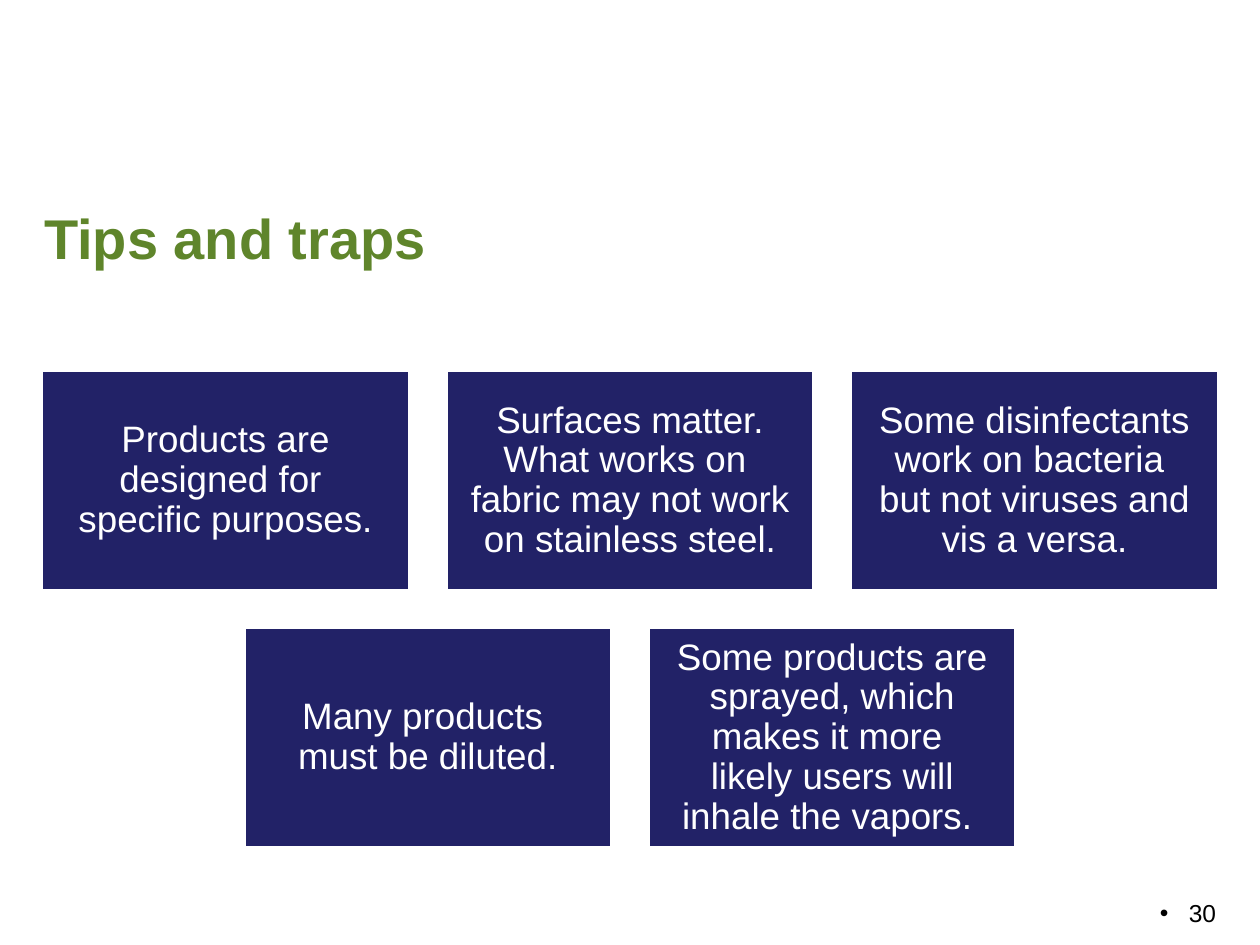
import dataclasses

import lxml.etree
import pptx
import pptx.dml.color
import pptx.enum.shapes
import pptx.enum.text
import pptx.oxml.ns
import pptx.util

Inches = pptx.util.Inches
Pt = pptx.util.Pt
Align = pptx.enum.text.PP_ALIGN
Anchor = pptx.enum.text.MSO_ANCHOR


@dataclasses.dataclass(frozen=True)
class Theme:
    font: str = "Arial"
    green: str = "5F852B"
    navy: str = "222267"
    white: str = "FFFFFF"
    black: str = "000000"
    title_size: int = 32
    card_size: int = 21
    number_size: int = 14


THEME = Theme()

TIPS = [
    "Products are designed for \nspecific purposes.",
    "Surfaces matter. What works on \nfabric may not work on stainless steel.",
    "Some disinfectants work on bacteria \nbut not viruses and vis a versa.",
    "Many products \nmust be diluted.",
    "Some products are sprayed, which makes it more \n"
    "likely users will inhale the vapors. ",
]


def rgb(color):
    return pptx.dml.color.RGBColor.from_string(color)


def set_attributes(target, values):
    for name, value in values.items():
        setattr(target, name, value)


def write_text(shape, text, size, color, frame_format, paragraph_format, bold=False):
    """Fill a shape with one formatted paragraph; newlines become line breaks."""
    frame = shape.text_frame
    set_attributes(frame, {"word_wrap": True, **frame_format})
    paragraph = frame.paragraphs[0]
    paragraph.text = text
    set_attributes(paragraph, paragraph_format)
    for run in paragraph.runs:
        set_attributes(run.font, {"name": THEME.font, "size": Pt(size), "bold": bold})
        run.font.color.rgb = rgb(color)
    return paragraph


def add_title(slide, left, top, width, height):
    title = slide.shapes.title
    set_attributes(title, {"left": left, "top": top, "width": width, "height": height})
    write_text(title, "Tips and traps", THEME.title_size, THEME.green,
               {"vertical_anchor": Anchor.MIDDLE},
               {"alignment": Align.LEFT, "line_spacing": Pt(33)}, bold=True)


def add_card(slide, text, left, top, width, height):
    card = slide.shapes.add_shape(
        pptx.enum.shapes.MSO_SHAPE.RECTANGLE, left, top, width, height)
    card.shadow.inherit = False
    card.fill.solid()
    card.fill.fore_color.rgb = rgb(THEME.navy)
    card.line.color.rgb = rgb(THEME.white)
    card.line.width = Pt(2)
    margins = {f"margin_{side}": Inches(0.09)
               for side in ("left", "top", "right", "bottom")}
    write_text(card, text, THEME.card_size, THEME.white,
               {"vertical_anchor": Anchor.MIDDLE, **margins},
               {"alignment": Align.CENTER, "line_spacing": 0.9})


def add_card_grid(slide, left, top, width, height, columns=3, gap=Inches(0.29)):
    """Place the tips in rows, each row centred in the box."""
    rows = [TIPS[start:start + columns] for start in range(0, len(TIPS), columns)]
    card_width = (width - gap * (columns - 1)) // columns
    card_height = (height - gap * (len(rows) - 1)) // len(rows)
    for row_index, row in enumerate(rows):
        row_width = len(row) * (card_width + gap) - gap
        row_left = left + (width - row_width) // 2
        for column, tip in enumerate(row):
            add_card(slide, tip, row_left + column * (card_width + gap),
                     top + row_index * (card_height + gap), card_width, card_height)


def add_page_number(slide, left, top, width, height):
    box = slide.shapes.add_textbox(left, top, width, height)
    paragraph = write_text(box, "30", THEME.number_size, THEME.black,
                           {"vertical_anchor": Anchor.TOP}, {"alignment": Align.RIGHT})
    # Bullet with a hanging indent
    properties = paragraph._p.get_or_add_pPr()
    indent = Inches(0.23)
    properties.set("marL", str(indent))
    properties.set("indent", str(-indent))
    for tag, attribute, value in (("a:buFont", "typeface", THEME.font),
                                  ("a:buChar", "char", "•")):
        bullet = lxml.etree.SubElement(properties, pptx.oxml.ns.qn(tag))
        bullet.set(attribute, value)


def main():
    presentation = pptx.Presentation()
    presentation.slide_width = Inches(10)
    presentation.slide_height = Inches(7.5)
    slide = presentation.slides.add_slide(presentation.slide_layouts[5])

    add_title(slide, Inches(0.25), Inches(1.42), Inches(9.5), Inches(1))
    add_card_grid(slide, Inches(0.33), Inches(2.94), Inches(9.34), Inches(3.79))
    add_page_number(slide, Inches(8.42), Inches(7.08), Inches(1.33), Inches(0.25))
    presentation.save("out.pptx")


if __name__ == "__main__":
    main()
